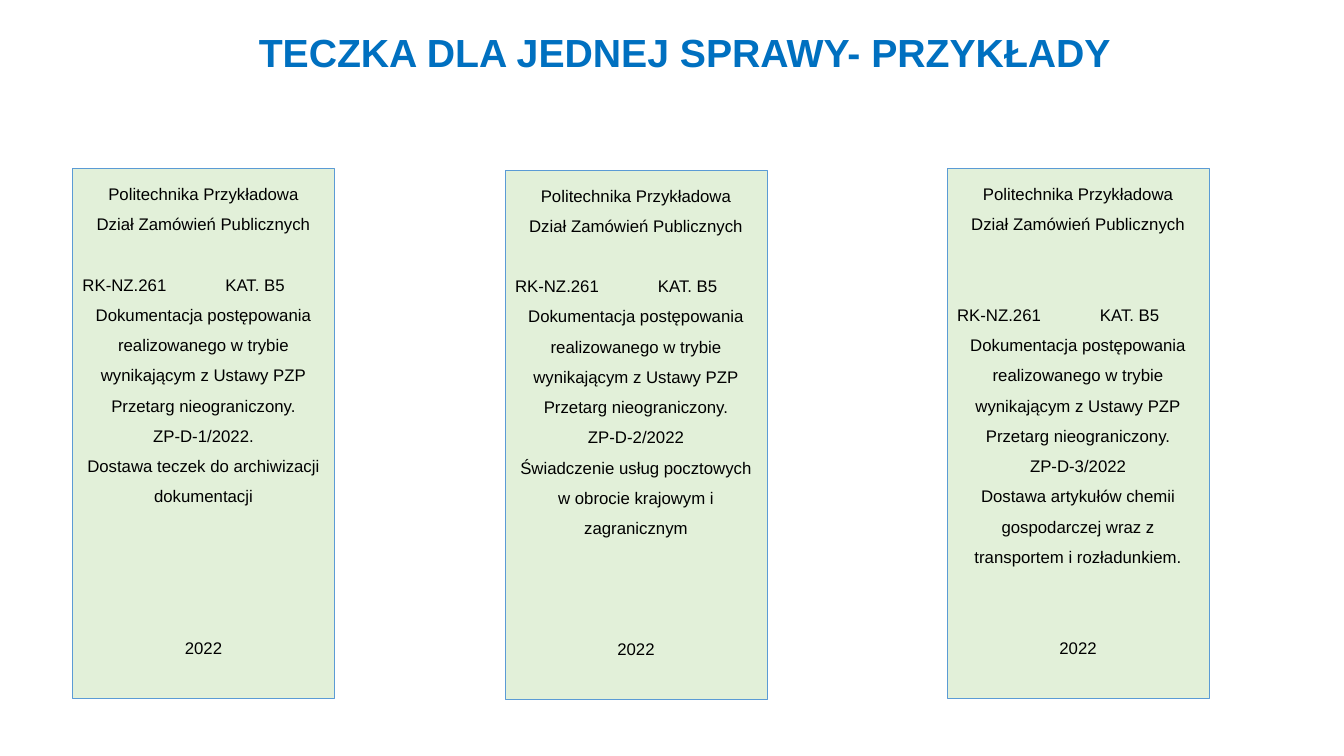
"""Build a slide with three sample folder labels, each for a single case."""
from dataclasses import dataclass
from typing import Any

from lxml import etree
from pptx import Presentation
from pptx import util as u
from pptx.dml.color import RGBColor
from pptx.enum import shapes, text
from pptx.oxml import ns

BLUE = RGBColor(0x00, 0x70, 0xC0)
EDGE = RGBColor(0x5B, 0x9B, 0xD5)
GREEN = RGBColor(0xE2, 0xF0, 0xD9)
BLACK = RGBColor(0x00, 0x00, 0x00)

PITCH = 21.6
CODE = "RK-NZ.261\tKAT. B5"
TITLE = {"size": u.Pt(28), "bold": True}
BODY = {"size": u.Pt(12), "bold": False}
FRAME = {
    "word_wrap": True,
    "auto_size": text.MSO_AUTO_SIZE.NONE,
    "vertical_anchor": text.MSO_ANCHOR.TOP,
}


@dataclass(frozen=True)
class Folder:
    """One folder label and the blank rows that part its text."""
    left: float
    top: float
    case: str
    topic: str
    upper: int
    lower: int


FOLDERS = [
    Folder(1.83, 4.25, "ZP-D-1/2022.",
           "Dostawa teczek do archiwizacji dokumentacji", 1, 4),
    Folder(12.73, 4.29, "ZP-D-2/2022",
           "Świadczenie usług pocztowych w obrocie krajowym i zagranicznym", 1, 3),
    Folder(23.87, 4.25, "ZP-D-3/2022",
           "Dostawa artykułów chemii gospodarczej wraz z transportem i rozładunkiem.", 2, 2),
]


def apply(item: Any, form: dict[str, Any]) -> None:
    """Set each format value on the item."""
    for name, value in form.items():
        setattr(item, name, value)


def write(para: Any, words: str, form: dict[str, Any], ink: RGBColor, rows: int = 0) -> None:
    """Fill a centred paragraph, with blank rows of space above it."""
    apply(para, {"alignment": text.PP_ALIGN.CENTER, "line_spacing": 1.5,
                 "space_before": u.Pt(rows * PITCH)})
    run = para.add_run()
    run.text = words
    apply(run.font, {"name": "Arial", **form})
    run.font.color.rgb = ink


def add_tab(para: Any, place: u.Length) -> None:
    """Align a paragraph left with one tab stop."""
    para.alignment = text.PP_ALIGN.LEFT
    tabs = etree.SubElement(para._p.get_or_add_pPr(), ns.qn("a:tabLst"))
    etree.SubElement(tabs, ns.qn("a:tab"), pos=str(int(place)), algn="l")


def draw(slide: Any, folder: Folder) -> None:
    """Draw one folder label."""
    card = slide.shapes.add_shape(
        shapes.MSO_SHAPE.RECTANGLE, u.Cm(folder.left), u.Cm(folder.top),
        u.Cm(6.6), u.Cm(13.34))
    card.shadow.inherit = False
    card.fill.solid()
    card.fill.fore_color.rgb = GREEN
    card.line.color.rgb = EDGE
    card.line.width = u.Pt(0.5)
    frame = card.text_frame
    apply(frame, FRAME)
    lines = [
        ("Politechnika Przykładowa", 0),
        ("Dział Zamówień Publicznych", 0),
        (CODE, folder.upper),
        ("Dokumentacja postępowania realizowanego w trybie wynikającym z Ustawy PZP", 0),
        ("Przetarg nieograniczony.", 0),
        (folder.case, 0),
        (folder.topic, 0),
        ("2022", folder.lower),
    ]
    for count, (words, rows) in enumerate(lines):
        para = frame.add_paragraph() if count else frame.paragraphs[0]
        write(para, words, BODY, BLACK, rows)
        if words == CODE:
            add_tab(para, u.Cm(3.6))


def main() -> None:
    """Build and save the slide."""
    deck = Presentation()
    apply(deck, {"slide_width": u.Cm(33.87), "slide_height": u.Cm(19.05)})
    slide = deck.slides.add_slide(deck.slide_layouts[6])
    head = slide.shapes.add_textbox(u.Cm(2.74), u.Cm(0), u.Cm(29.03), u.Cm(2.06))
    apply(head.text_frame, FRAME)
    write(head.text_frame.paragraphs[0],
          "TECZKA DLA JEDNEJ SPRAWY- PRZYKŁADY", TITLE, BLUE)
    for folder in FOLDERS:
        draw(slide, folder)
    deck.save("out.pptx")


if __name__ == "__main__":
    main()
